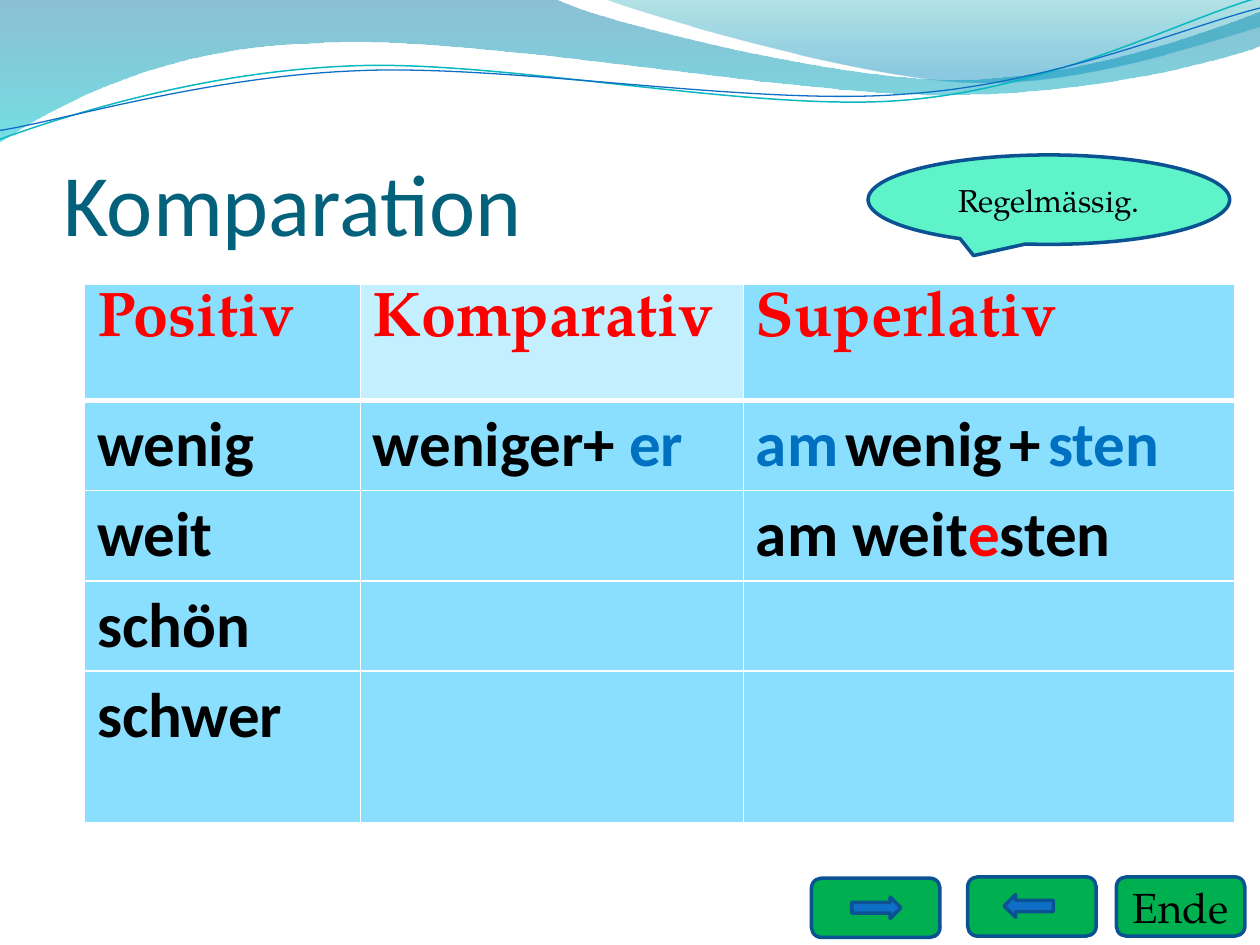
from typing import NamedTuple, Optional

import pptx
import pptx.dml.color
import pptx.enum.shapes
import pptx.enum.text
import pptx.oxml
import pptx.oxml.ns
import pptx.util
from lxml import etree

SHAPE = pptx.enum.shapes.MSO_SHAPE
ALIGN = pptx.enum.text.PP_ALIGN
ANCHOR = pptx.enum.text.MSO_ANCHOR
qn = pptx.oxml.ns.qn

# The slide is a grid of 10 columns by 7.5 rows, each cell one inch square
UNIT = pptx.util.Inches(1)
COLUMNS, ROWS = 10, 7.5
SANS, SERIF = "Calibri", "TeX Gyre Pagella"
COLORS = {
    "black": "000000", "white": "FFFFFF", "red": "FF0000", "ending": "0070C0",
    "title": "04617B", "cell": "8ADFFF", "light cell": "C4EFFF",
    "button": "00B050", "arrow": "0F6FC6", "outline": "0B5292",
    "callout": "5FF3CA", "teal line": "0AB8BF", "blue line": "0F6FC6",
    "deep blue": "0074A1", "turquoise": "00C6CF",
    "deep teal": "00A1A9", "sky": "008BBF",
}


class Box(NamedTuple):
    left: float
    top: float
    width: float
    height: float


class Span(NamedTuple):
    text: str
    color: str = "black"
    size: float = 36
    font: str = SANS
    bold: bool = True


class Stop(NamedTuple):
    position: float
    color: str
    opacity: int


class Wave(NamedTuple):
    start: tuple
    segments: tuple  # two numbers: straight line; six numbers: Bézier curve
    stops: tuple = ()
    line: Optional[str] = None
    weight: float = 0
    rotation: float = 0


class Figure(NamedTuple):
    kind: int
    box: Box
    fill: str
    label: Optional[Span] = None
    rotation: float = 0


WAVES = (
    Wave((0, 0), ((4.4, -0.01), (4.76, 0.17, 6.64, 0.63, 7.58, 0.63),
                  (8.53, 0.63, 9.58, 0.26, 10, 0.09), (10.01, 0.36),
                  (9.83, 0.44, 8.7, 0.76, 7.46, 0.75),
                  (6.22, 0.75, 3.82, 0.28, 2.57, 0.34),
                  (1.29, 0.36, 0.46, 0.83, -0.01, 1.13), (0, 0)),
         (Stop(0, "deep blue", 45), Stop(1, "turquoise", 55))),
    Wave((4.79, -0.01), ((5.09, 0.11, 6.82, 0.62, 7.69, 0.65),
                         (8.56, 0.69, 9.61, 0.32, 10, 0.21), (10, 0),
                         (4.79, -0.01)),
         (Stop(0, "deep teal", 30), Stop(0.8, "sky", 45))),
    Wave((-0.02, 0.87), ((0.47, 0.72, 1.58, 0.41, 2.78, 0.42),
                         (3.96, 0.42, 5.91, 0.93, 7.12, 0.9),
                         (8.32, 0.87, 9.4, 0.36, 10, 0.22)),
         line="teal line", weight=0.85, rotation=357.3),
    Wave((-0.02, 0.8), ((0.46, 0.75, 1.64, 0.45, 2.83, 0.46),
                        (4.04, 0.46, 5.96, 0.89, 7.16, 0.85),
                        (8.35, 0.83, 9.42, 0.42, 10.02, 0.3)),
         line="blue line", weight=0.75, rotation=357.3),
)

BUTTONS = (
    Figure(SHAPE.ROUNDED_RECTANGLE, Box(6.44, 6.97, 1.02, 0.47), "button"),
    Figure(SHAPE.ROUNDED_RECTANGLE, Box(7.68, 6.96, 1.02, 0.47), "button"),
    Figure(SHAPE.ROUNDED_RECTANGLE, Box(8.86, 6.96, 1.02, 0.47), "button",
           Span("Ende", size=24, font=SERIF, bold=False)),
    Figure(SHAPE.RIGHT_ARROW, Box(6.76, 7.12, 0.39, 0.17), "arrow"),
    Figure(SHAPE.RIGHT_ARROW, Box(7.97, 7.1, 0.39, 0.18), "arrow", rotation=180),
)
CALLOUT = Figure(SHAPE.OVAL_CALLOUT, Box(6.89, 1.23, 2.87, 0.71), "callout",
                 Span("Regelmässig.", size=18, font=SERIF, bold=False))

TABLE_BOX = Box(0.67, 2.26, 9.13, 4.26)
COLUMN_WIDTHS = (2.19, 3.04, 3.9)
ROW_HEIGHTS = (0.92, 0.7, 0.72, 0.71, 1.21)
GAP = Span(" ", size=18)
HEADER = tuple((Span(word, "red", font=SERIF),)
               for word in ("Positiv", "Komparativ", "Superlativ"))
CELLS = (
    HEADER,
    ((Span("wenig"),), (Span("weniger+ "), Span("er", "ending")),
     (Span("am", "ending"), GAP, Span("wenig"), GAP, Span("+"), GAP,
      Span("sten", "ending"))),
    ((Span("weit"),), (), (Span("am weit"), Span("e", "red"), Span("sten"))),
    ((Span("schön"),), (), ()),
    ((Span("schwer"),), (), ()),
)


def rgb(name: str) -> pptx.dml.color.RGBColor:
    return pptx.dml.color.RGBColor.from_string(COLORS[name])


def emu(*lengths: float) -> list:
    return [round(length * UNIT) for length in lengths]


def write(para, spans) -> None:
    for span in spans:
        run = para.add_run()
        run.text = span.text
        run.font.name, run.font.size = span.font, pptx.util.Pt(span.size)
        run.font.bold = span.bold
        run.font.color.rgb = rgb(span.color)


def bend(shape, segments) -> None:
    """Join each three straight steps that stand for a curve into one Bézier."""
    steps = iter(list(shape._element.spPr.iter(qn("a:lnTo"))))
    for segment in segments:
        step = next(steps)
        if len(segment) == 6:
            step.tag = qn("a:cubicBezTo")
            for _ in range(2):
                extra = next(steps)
                step.append(extra[0])
                extra.getparent().remove(extra)


def draw_wave(slide, wave: Wave) -> None:
    points = [emu(*segment[i:i + 2]) for segment in wave.segments
              for i in range(0, len(segment), 2)]
    builder = slide.shapes.build_freeform(*emu(*wave.start), scale=1.0)
    builder.add_line_segments(points, close=bool(wave.stops))
    shape = builder.convert_to_shape()
    bend(shape, wave.segments)
    shape.rotation = wave.rotation
    shape.shadow.inherit = False
    if wave.line:
        shape.fill.background()
        shape.line.color.rgb = rgb(wave.line)
        shape.line.width = pptx.util.Pt(wave.weight)
        return
    shape.line.fill.background()
    shape.fill.gradient()
    shape.fill.gradient_angle = 270
    for target, stop in zip(shape.fill.gradient_stops, wave.stops):
        target.position, target.color.rgb = stop.position, rgb(stop.color)
    for color, stop in zip(shape._element.spPr.iter(qn("a:srgbClr")), wave.stops):
        etree.SubElement(color, qn("a:alpha"), val=str(stop.opacity * 1000))


def draw_figure(slide, figure: Figure) -> None:
    shape = slide.shapes.add_shape(figure.kind, *emu(*figure.box))
    shape.shadow.inherit = False
    shape.rotation = figure.rotation
    shape.fill.solid()
    shape.fill.fore_color.rgb = rgb(figure.fill)
    shape.line.color.rgb = rgb("outline")
    shape.line.width = pptx.util.Pt(2)
    if figure.label:
        shape.text_frame.vertical_anchor = ANCHOR.MIDDLE
        para = shape.text_frame.paragraphs[0]
        para.alignment = ALIGN.CENTER
        write(para, [figure.label])


def set_borders(cell, **weights: float) -> None:
    properties = cell._tc.get_or_add_tcPr()
    for index, side in enumerate("LRTB"):
        line = etree.Element(qn(f"a:ln{side}"), w=str(pptx.util.Pt(weights.get(side, 1))))
        fill = etree.SubElement(line, qn("a:solidFill"))
        etree.SubElement(fill, qn("a:srgbClr"), val=COLORS["white"])
        properties.insert(index, line)


def draw_table(slide) -> None:
    table = slide.shapes.add_table(len(CELLS), len(HEADER), *emu(*TABLE_BOX)).table
    for column, width in zip(table.columns, emu(*COLUMN_WIDTHS)):
        column.width = width
    for row, height in zip(table.rows, emu(*ROW_HEIGHTS)):
        row.height = height
    for r, row in enumerate(CELLS):
        for c, spans in enumerate(row):
            cell = table.cell(r, c)
            cell.fill.solid()
            cell.fill.fore_color.rgb = rgb("light cell" if (r, c) == (0, 1) else "cell")
            set_borders(cell, B=3 if r == 0 else 1, T=3 if r == 1 else 1)
            write(cell.text_frame.paragraphs[0], spans)


def draw_title(slide) -> None:
    title = slide.shapes.title
    title.left, title.top, title.width, title.height = emu(0.5, 0.77, 9, 1.25)
    frame = title.text_frame
    frame.margin_left = frame.margin_right = frame.margin_bottom = 0
    frame.vertical_anchor = ANCHOR.BOTTOM
    frame.paragraphs[0].alignment = ALIGN.LEFT
    write(frame.paragraphs[0], [Span("Komparation", "title", 50, bold=False)])


def main() -> None:
    deck = pptx.Presentation()
    deck.slide_width, deck.slide_height = emu(COLUMNS, ROWS)
    slide = deck.slides.add_slide(deck.slide_layouts.get_by_name("Title Only"))
    # Waves across the top
    for wave in WAVES:
        draw_wave(slide, wave)
    # Navigation buttons
    for button in BUTTONS:
        draw_figure(slide, button)
    # Heading, table and remark
    draw_title(slide)
    draw_table(slide)
    draw_figure(slide, CALLOUT)
    deck.save("out.pptx")


if __name__ == "__main__":
    main()
